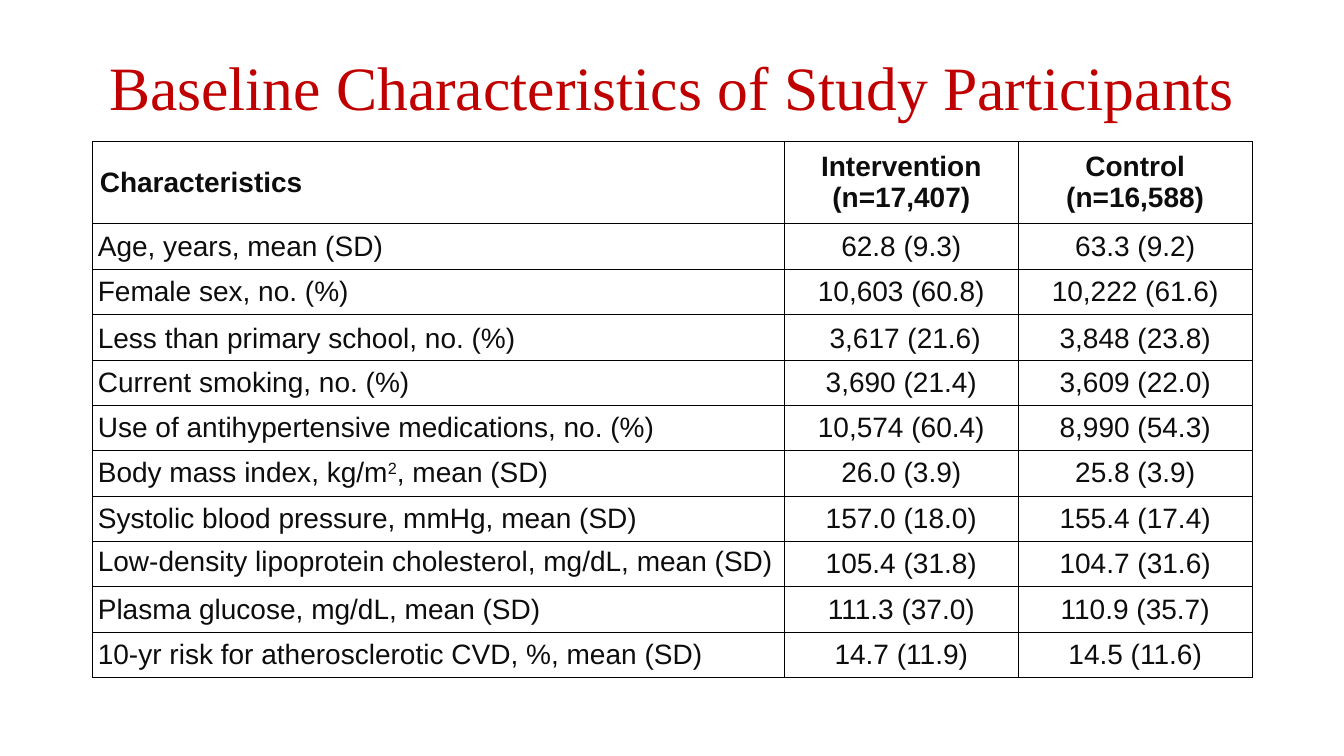
from lxml.etree import SubElement
from pptx import Presentation
from pptx.dml.color import RGBColor
from pptx.enum.text import MSO_ANCHOR, MSO_AUTO_SIZE, PP_ALIGN
from pptx.oxml.ns import qn
from pptx.util import Inches, Pt

RED = RGBColor(0xC0, 0x00, 0x00)
INK = RGBColor(0x0D, 0x0D, 0x0D)
BLACK = RGBColor(0x00, 0x00, 0x00)

TITLE = "Baseline Characteristics of Study Participants "
COL_WIDTHS = [6.86, 2.32, 2.32]
HEADER_HEIGHT, ROW_HEIGHT = 0.82, 0.45

# Text between carets is superscript
ROWS = [
    ("Characteristics", "Intervention\n(n=17,407)", "Control\n(n=16,588)"),
    ("Age, years, mean (SD)", "62.8 (9.3)", "63.3 (9.2)"),
    ("Female sex, no. (%)", "10,603 (60.8)", "10,222 (61.6)"),
    ("Less than primary school, no. (%)", " 3,617 (21.6)", "3,848 (23.8)"),
    ("Current smoking, no. (%)", "3,690 (21.4)", "3,609 (22.0)"),
    ("Use of antihypertensive medications, no. (%)", "10,574 (60.4)", "8,990 (54.3)"),
    ("Body mass index, kg/m^2^, mean (SD)", "26.0 (3.9)", "25.8 (3.9)"),
    ("Systolic blood pressure, mmHg, mean (SD)", "157.0 (18.0)", "155.4 (17.4)"),
    ("Low-density lipoprotein cholesterol, mg/dL, mean (SD)", "105.4 (31.8)", "104.7 (31.6)"),
    ("Plasma glucose, mg/dL, mean (SD)", "111.3 (37.0)", "110.9 (35.7)"),
    ("10-yr risk for atherosclerotic CVD, %, mean (SD)", "14.7 (11.9)", "14.5 (11.6)"),
]
SCHOOL_ROW, LDL_ROW = 3, 8


def set_font(font, name, size, color, bold=False):
    font.name, font.size, font.bold = name, Pt(size), bold
    font.color.rgb = color


def add_title(s):
    title = s.shapes.title
    title.left, title.top = Inches(0.92), Inches(0.4)
    title.width, title.height = Inches(11.5), Inches(1)
    tf = title.text_frame
    tf.text = TITLE
    tf.auto_size = MSO_AUTO_SIZE.NONE
    tf.vertical_anchor = MSO_ANCHOR.MIDDLE
    p = tf.paragraphs[0]
    p.alignment, p.line_spacing = PP_ALIGN.CENTER, 0.9
    set_font(p.font, "Times New Roman", 44, RED)


def add_borders(cell):
    tcPr = cell._tc.get_or_add_tcPr()
    for side in ("a:lnL", "a:lnR", "a:lnT", "a:lnB"):
        ln = SubElement(tcPr, qn(side), w=str(Pt(0.5)))
        fill = SubElement(ln, qn("a:solidFill"))
        SubElement(fill, qn("a:srgbClr"), val=str(BLACK))


def write_paragraph(p, text, align, bold):
    p.alignment = align
    set_font(p.font, "Arial", 20, INK, bold)
    for i, part in enumerate(text.split("^")):
        r = p.add_run()
        r.text = part
        if i % 2:
            r._r.get_or_add_rPr().set("baseline", "30000")


def cell_anchor(row, col):
    if row == SCHOOL_ROW:
        return MSO_ANCHOR.BOTTOM
    if (row, col) == (LDL_ROW, 0):
        return MSO_ANCHOR.TOP
    return MSO_ANCHOR.MIDDLE


def fill_cell(cell, text, row, col):
    header = row == 0
    cell.margin_left = cell.margin_right = Inches(0.07 if header else 0.05)
    cell.margin_top = cell.margin_bottom = Inches(0 if header else 0.05)
    cell.vertical_anchor = cell_anchor(row, col)
    add_borders(cell)
    cell.fill.background()
    align = PP_ALIGN.CENTER if col else PP_ALIGN.LEFT
    tf = cell.text_frame
    for i, line in enumerate(text.split("\n")):
        p = tf.add_paragraph() if i else tf.paragraphs[0]
        write_paragraph(p, line, align, header)


def add_characteristics_table(s):
    height = HEADER_HEIGHT + ROW_HEIGHT * (len(ROWS) - 1)
    table = s.shapes.add_table(
        len(ROWS), len(COL_WIDTHS), Inches(0.92), Inches(1.4),
        Inches(sum(COL_WIDTHS)), Inches(height)).table
    table.first_row = table.horz_banding = False
    for column, width in zip(table.columns, COL_WIDTHS):
        column.width = Inches(width)
    for row, texts in enumerate(ROWS):
        table.rows[row].height = Inches(ROW_HEIGHT if row else HEADER_HEIGHT)
        for col, text in enumerate(texts):
            fill_cell(table.cell(row, col), text, row, col)


def main():
    prs = Presentation()
    prs.slide_width, prs.slide_height = Inches(13.33), Inches(7.5)
    s = prs.slides.add_slide(prs.slide_layouts[5])
    add_title(s)
    add_characteristics_table(s)
    prs.save("out.pptx")


if __name__ == "__main__":
    main()
